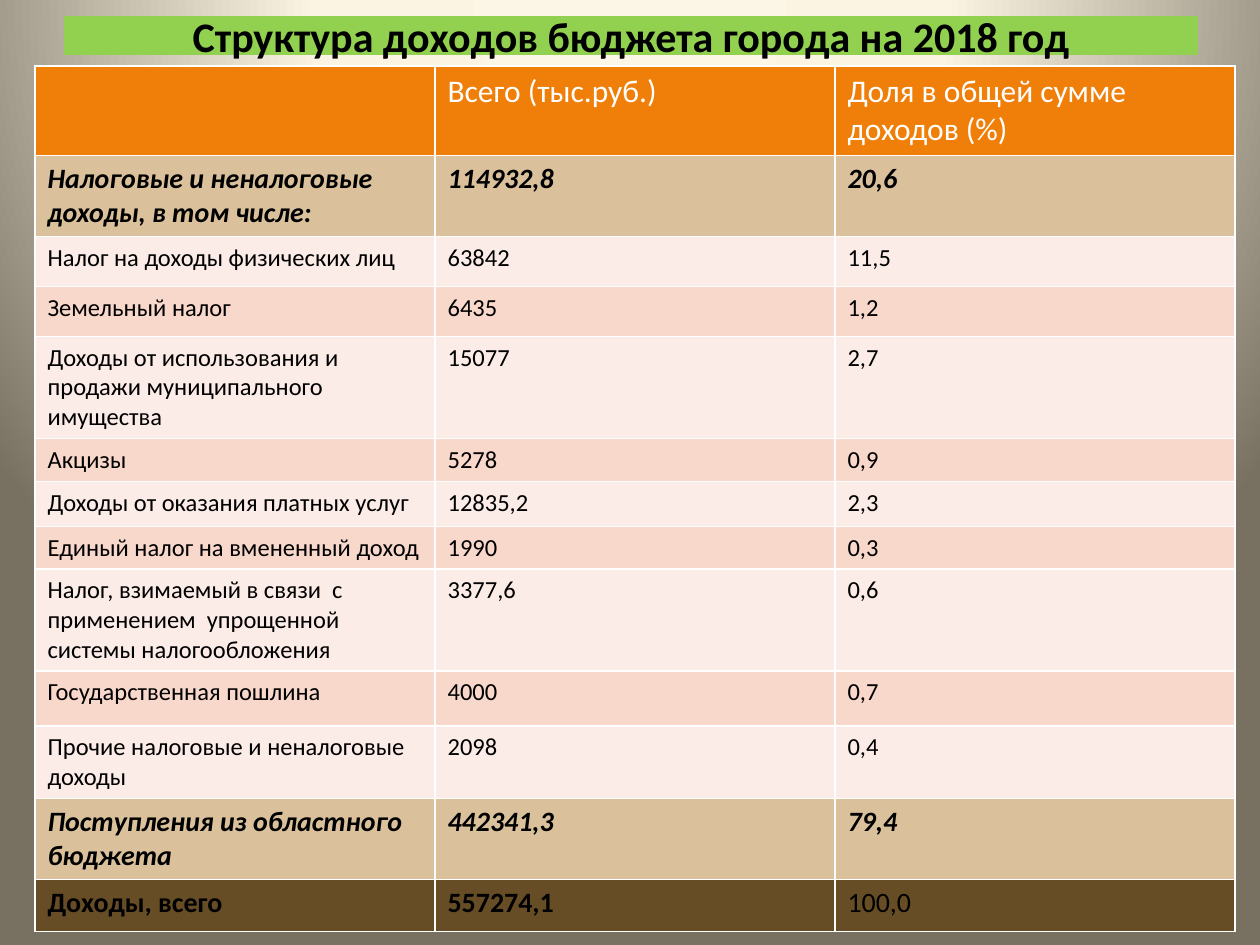
import pptx
import pptx.dml.color
import pptx.enum.text
import pptx.oxml
import pptx.oxml.ns
import pptx.util

RGBColor = pptx.dml.color.RGBColor

PX_PER_INCH = 126
FONT = "Calibri"
BLACK = RGBColor(0x00, 0x00, 0x00)
WHITE = RGBColor(0xFF, 0xFF, 0xFF)
GREEN = RGBColor(0x92, 0xD0, 0x50)
ORANGE = RGBColor(0xF0, 0x7F, 0x09)
TAN = RGBColor(0xDA, 0xC1, 0x9B)
PALE_PINK = RGBColor(0xFC, 0xEC, 0xE7)
PINK = RGBColor(0xF9, 0xD8, 0xCC)
BROWN = RGBColor(0x67, 0x4D, 0x26)
BACKGROUND_STOPS = [
    (0, RGBColor(0xFC, 0xF6, 0xE6)),
    (40, RGBColor(0xFB, 0xF4, 0xE2)),
    (100, RGBColor(0x78, 0x71, 0x61)),
]

# Row kinds: font size, text colour, bold, italic
ROW_STYLES = {
    "header": (18, WHITE, False, False),
    "group": (16, BLACK, True, True),
    "item": (14, BLACK, False, False),
    "total": (16, BLACK, True, False),
}
ROW_FILLS = {"header": ORANGE, "group": TAN, "total": BROWN}
ITEM_FILLS = (PALE_PINK, PINK)

# Row kind, height in px, cell texts
INCOME_ROWS = [
    ("header", 89, ("", "Всего (тыс.руб.)", "Доля в общей сумме доходов (%)")),
    ("group", 81, ("Налоговые и неналоговые доходы, в том числе:", "114932,8", "20,6")),
    ("item", 50, ("Налог на доходы физических лиц", "63842", "11,5")),
    ("item", 50, ("Земельный налог", "6435", "1,2")),
    ("item", 102, ("Доходы от использования и продажи муниципального имущества",
                   "15077", "2,7")),
    ("item", 43, ("Акцизы", "5278", "0,9")),
    ("item", 45, ("Доходы от оказания платных услуг", "12835,2", "2,3")),
    ("item", 42, ("Единый налог на вмененный доход", "1990", "0,3")),
    ("item", 102, ("Налог, взимаемый в связи  с применением  упрощенной "
                   "системы налогообложения", "3377,6", "0,6")),
    ("item", 55, ("Государственная пошлина", "4000", "0,7")),
    ("item", 72, ("Прочие налоговые и неналоговые доходы", "2098", "0,4")),
    ("group", 81, ("Поступления из областного бюджета", "442341,3", "79,4")),
    ("total", 52, ("Доходы, всего", "557274,1", "100,0")),
]


def px(length):
    return pptx.util.Emu(length * 914400 // PX_PER_INCH)


def set_font(para, size, color, bold, italic=False):
    font = para.font
    font.name = FONT
    font.size = pptx.util.Pt(size)
    font.color.rgb = color
    font.bold = bold
    font.italic = italic


def paint_background(page):
    stops = "".join(
        f'<a:gs pos="{position * 1000}"><a:srgbClr val="{color}"/></a:gs>'
        for position, color in BACKGROUND_STOPS
    )
    background = pptx.oxml.parse_xml(
        f'<p:bg {pptx.oxml.ns.nsdecls("p", "a")}><p:bgPr>'
        f'<a:gradFill rotWithShape="1"><a:gsLst>{stops}</a:gsLst>'
        '<a:path path="circle">'
        '<a:fillToRect l="50000" t="-80000" r="50000" b="180000"/>'
        '</a:path></a:gradFill><a:effectLst/></p:bgPr></p:bg>'
    )
    page.element.cSld.insert(0, background)


def add_title(page, left, top, width, height):
    title = page.shapes.title
    title.left, title.top = px(left), px(top)
    title.width, title.height = px(width), px(height)
    title.fill.solid()
    title.fill.fore_color.rgb = GREEN
    frame = title.text_frame
    frame.text = "Структура доходов бюджета города на 2018 год"
    frame.auto_size = pptx.enum.text.MSO_AUTO_SIZE.NONE
    frame.vertical_anchor = pptx.enum.text.MSO_ANCHOR.MIDDLE
    para = frame.paragraphs[0]
    para.alignment = pptx.enum.text.PP_ALIGN.CENTER
    set_font(para, 24, BLACK, True)


def set_borders(cell, color, width):
    properties = cell._tc.get_or_add_tcPr()
    for index, side in enumerate(("lnL", "lnR", "lnT", "lnB")):
        line = pptx.oxml.parse_xml(
            f'<a:{side} {pptx.oxml.ns.nsdecls("a")} w="{pptx.util.Pt(width)}">'
            f'<a:solidFill><a:srgbClr val="{color}"/></a:solidFill></a:{side}>'
        )
        properties.insert(index, line)


def add_income_table(page, left, top, width):
    height = sum(row_height for _, row_height, _ in INCOME_ROWS)
    column_count = len(INCOME_ROWS[0][2])
    table = page.shapes.add_table(
        len(INCOME_ROWS), column_count, px(left), px(top), px(width), px(height)
    ).table
    table.horz_banding = False
    for column in table.columns:
        column.width = px(width // column_count)
    for row_index, (kind, row_height, texts) in enumerate(INCOME_ROWS):
        table.rows[row_index].height = px(row_height)
        size, color, bold, italic = ROW_STYLES[kind]
        for column_index, text in enumerate(texts):
            cell = table.cell(row_index, column_index)
            cell.text = text
            cell.fill.solid()
            cell.fill.fore_color.rgb = ROW_FILLS.get(kind, ITEM_FILLS[row_index % 2])
            set_borders(cell, WHITE, 1)
            # The share in the total row is not bold
            plain_share = kind == "total" and column_index == column_count - 1
            set_font(cell.text_frame.paragraphs[0], size, color,
                     bold and not plain_share, italic)


def main():
    deck = pptx.Presentation()
    deck.slide_width, deck.slide_height = px(1260), px(945)
    page = deck.slides.add_slide(deck.slide_layouts[5])
    paint_background(page)
    add_title(page, 64, 16, 1134, 39)
    add_income_table(page, 35, 66, 1200)
    deck.save("out.pptx")


if __name__ == "__main__":
    main()
